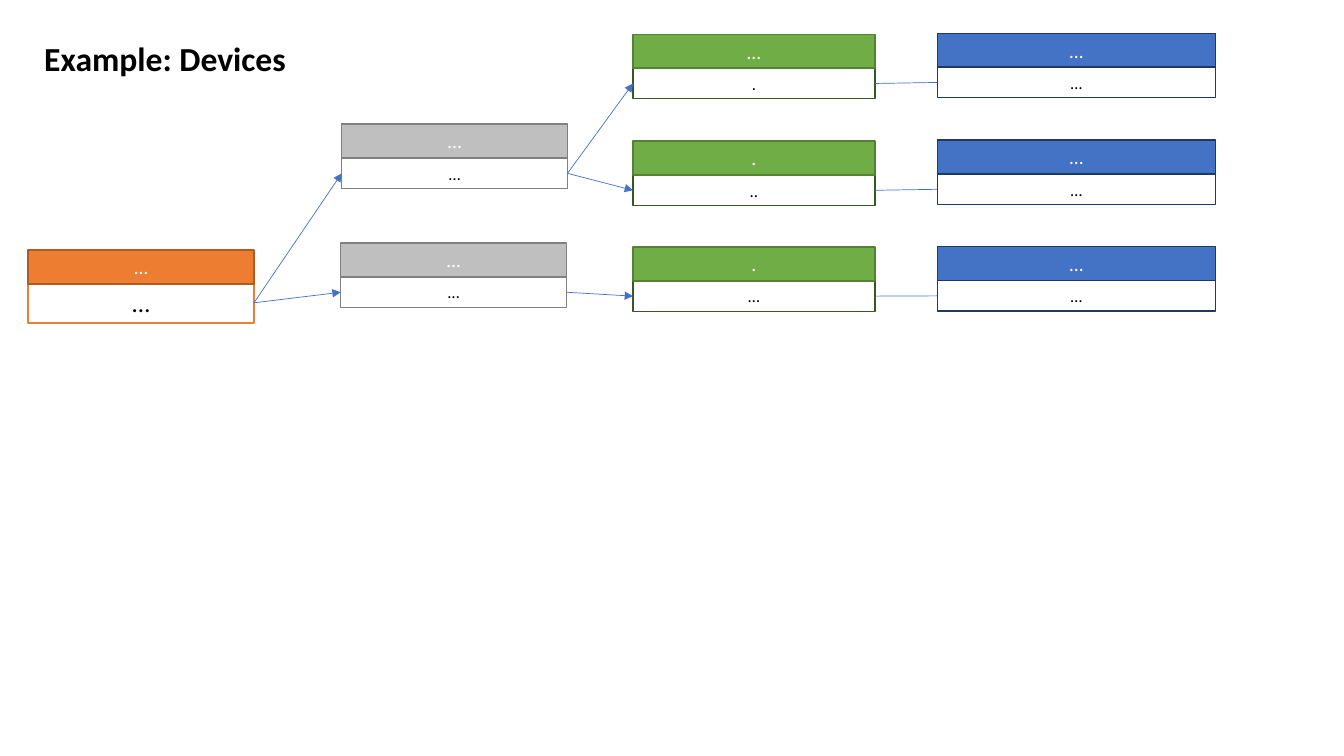
from lxml.etree import SubElement
from pptx import Presentation
from pptx.dml.color import RGBColor
from pptx.enum.shapes import MSO_CONNECTOR, MSO_SHAPE
from pptx.enum.text import MSO_ANCHOR, MSO_AUTO_SIZE, PP_ALIGN
from pptx.oxml.ns import qn
from pptx.util import Pt

FONT = "Calibri"
LINK = "4472C4"
HEADER_HEIGHT = 24.24
LEFT_SITE, RIGHT_SITE = 1, 3

# level: header fill, header line, body line
PALETTES = {
    "root": ("ED7D31", "AF5C24", "ED7D31"),
    "group": ("BFBFBF", "808080", "808080"),
    "device": ("70AD47", "548235", "385723"),
    "detail": ("4472C4", "203864", "203864"),
}

# name: level, left, top, width, header text, body text
CARDS = {
    "root": ("root", 20.16, 178.56, 161.28, "…", "…"),
    "group 1": ("group", 244.08, 88.7, 161.28, "…", "…"),
    "group 2": ("group", 243.36, 173.6, 161.28, "…", "…"),
    "device 1": ("device", 452.16, 24.48, 172.8, "…", "."),
    "device 2": ("device", 452.16, 100.8, 172.8, ".", ".."),
    "device 3": ("device", 452.16, 176.4, 172.8, ".", "…"),
    "detail 1": ("detail", 669.6, 23.76, 198.72, "…", "…"),
    "detail 2": ("detail", 669.6, 100.08, 198.72, "…", "…"),
    "detail 3": ("detail", 669.6, 176.2, 198.72, "…", "…"),
}

# start, end, has arrowhead
LINKS = [
    ("device 1", "detail 1", False),
    ("device 2", "detail 2", False),
    ("device 3", "detail 3", False),
    ("root", "group 1", True),
    ("root", "group 2", True),
    ("group 1", "device 1", True),
    ("group 1", "device 2", True),
    ("group 2", "device 3", True),
]


def color(hex_value):
    return RGBColor.from_string(hex_value)


def style_text(frame, text, size, hex_value, bold=False):
    frame.text = text
    font = frame.paragraphs[0].runs[0].font
    font.name, font.size, font.bold = FONT, Pt(size), bold
    font.color.rgb = color(hex_value)


def add_title(slide, left, top, width, height):
    title = slide.shapes.add_textbox(Pt(left), Pt(top), Pt(width), Pt(height))
    title.text_frame.word_wrap = False
    title.text_frame.auto_size = MSO_AUTO_SIZE.SHAPE_TO_FIT_TEXT
    style_text(title.text_frame, "Example: Devices", 24, "000000", bold=True)


def add_band(slide, box, fill, line, text, size, text_color):
    band = slide.shapes.add_shape(MSO_SHAPE.RECTANGLE, *map(Pt, box))
    band.shadow.inherit = False
    band.fill.solid()
    band.fill.fore_color.rgb = color(fill)
    band.line.color.rgb = color(line)
    band.line.width = Pt(1)
    frame = band.text_frame
    frame.word_wrap = True
    frame.auto_size = MSO_AUTO_SIZE.SHAPE_TO_FIT_TEXT
    frame.vertical_anchor = MSO_ANCHOR.MIDDLE
    style_text(frame, text, size, text_color)
    frame.paragraphs[0].alignment = PP_ALIGN.CENTER
    return band


def add_card(slide, level, left, top, width, header_text, body_text):
    """Draw a coloured header over a white body and return the body."""
    fill, header_line, body_line = PALETTES[level]
    is_root = level == "root"
    body_size, body_height = (18, 29.08) if is_root else (12, 21.81)
    body_top = top + (23.2 if is_root else HEADER_HEIGHT)
    body = add_band(slide, (left, body_top, width, body_height),
                    "FFFFFF", body_line, body_text, body_size, "000000")
    add_band(slide, (left, top, width, HEADER_HEIGHT),
             fill, header_line, header_text, 14, "FFFFFF")
    return body


def add_link(slide, start, end, has_arrow):
    link = slide.shapes.add_connector(MSO_CONNECTOR.STRAIGHT, 0, 0, 0, 0)
    link.begin_connect(start, RIGHT_SITE)
    link.end_connect(end, LEFT_SITE)
    link.line.color.rgb = color(LINK)
    link.line.width = Pt(0.5)
    if has_arrow:
        SubElement(link.line._get_or_add_ln(), qn("a:tailEnd"), type="triangle")
    SubElement(link._element.spPr, qn("a:effectLst"))


def main():
    deck = Presentation()
    deck.slide_width, deck.slide_height = Pt(960), Pt(540)
    slide = deck.slides.add_slide(deck.slide_layouts[6])
    add_title(slide, 24.48, 23.76, 188.64, 36)
    bodies = {name: add_card(slide, *card) for name, card in CARDS.items()}
    for start, end, has_arrow in LINKS:
        add_link(slide, bodies[start], bodies[end], has_arrow)
    deck.save("out.pptx")


if __name__ == "__main__":
    main()
